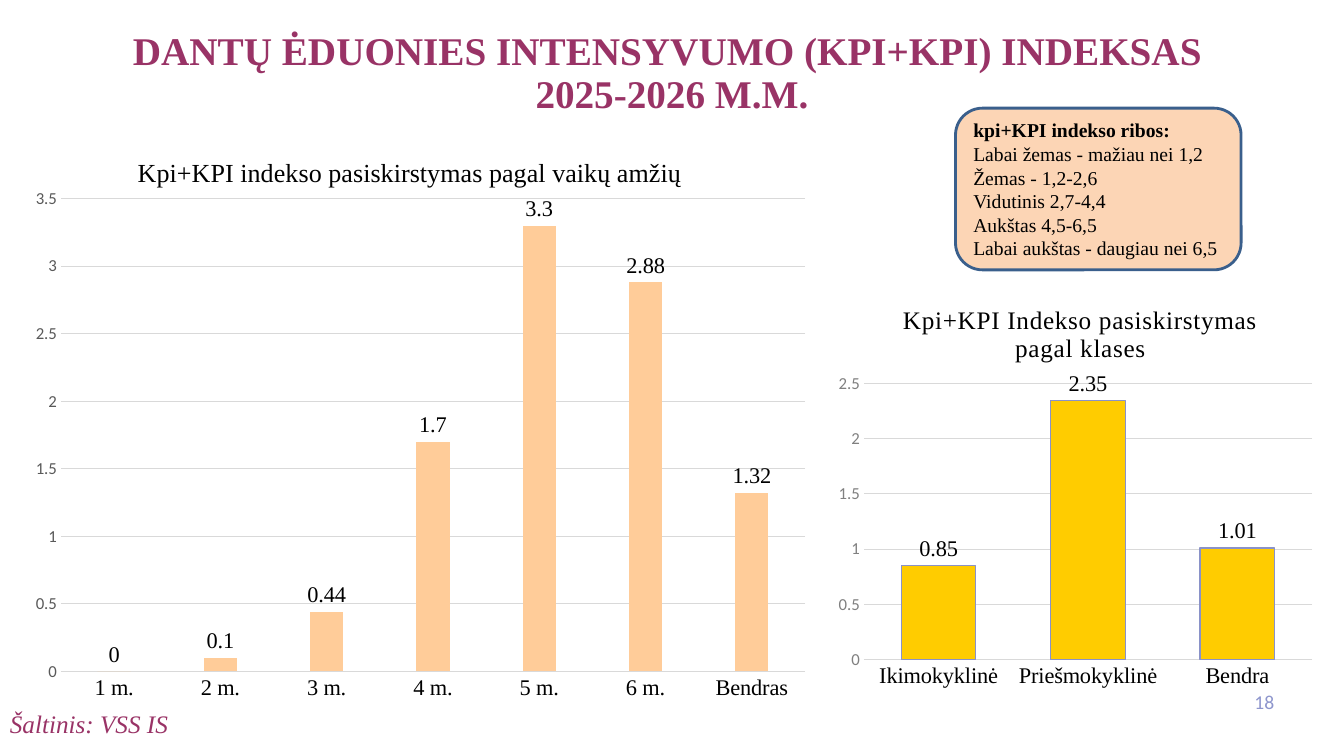
from lxml.etree import SubElement
from pptx import Presentation
from pptx.chart.data import CategoryChartData as ChartData
from pptx.dml.color import RGBColor as Color
from pptx.enum.chart import XL_CHART_TYPE as ChartType, XL_LABEL_POSITION as LabelPosition
from pptx.enum.chart import XL_TICK_MARK as TickMark
from pptx.enum.shapes import MSO_SHAPE as Shape
from pptx.enum.text import MSO_ANCHOR as Anchor, MSO_AUTO_SIZE as AutoSize, PP_ALIGN as Align
from pptx.oxml.ns import qn
from pptx.util import Pt

PX = 9525
SERIF, SANS = "Times New Roman", "Calibri"
COLORS = {
    "plum": "993366", "black": "000000", "peach": "FCD5B5", "navy": "3A5F8C",
    "lilac": "8E96CD", "grid": "D9D9D9", "gray": "808080", "dark": "595959",
    "orange": "FFCC99", "yellow": "FFCC00", "edge": "8A92C8",
}


def color(name):
    """Return the named colour."""
    return Color.from_string(COLORS[name])


def emu(box):
    """Turn a box in px into EMU."""
    return [length * PX for length in box]


def style(font, size, tint, name=SERIF, **extra):
    """Apply format values to a font."""
    values = {"size": Pt(size), "name": name, "bold": False, **extra}
    for key, value in values.items():
        setattr(font, key, value)
    font.color.rgb = color(tint)


def add_title(page, box, text):
    """Move and format the title placeholder."""
    title = page.shapes.title
    title.left, title.top, title.width, title.height = emu(box)
    frame = title.text_frame
    frame.text = text
    frame.auto_size = AutoSize.NONE
    frame.vertical_anchor = Anchor.BOTTOM
    para = frame.paragraphs[0]
    para.alignment, para.line_spacing = Align.CENTER, 0.9
    for span in para.runs:
        style(span.font, 28, "plum", bold=True)


def add_note(page, box, text, size, tint, name=SERIF, align=Align.LEFT, italic=False):
    """Add one line of small text."""
    frame = page.shapes.add_textbox(*emu(box)).text_frame
    frame.word_wrap = True
    para = frame.paragraphs[0]
    para.text, para.alignment = text, align
    style(para.runs[0].font, size, tint, name, italic=italic)


def add_limits(page, box, lines):
    """Add the rounded card with the index limits."""
    card = page.shapes.add_shape(Shape.ROUNDED_RECTANGLE, *emu(box))
    card.shadow.inherit = False
    card.fill.solid()
    card.fill.fore_color.rgb = color("peach")
    card.line.color.rgb = color("navy")
    card.line.width = Pt(2)
    frame = card.text_frame
    frame.word_wrap = True
    frame.vertical_anchor = Anchor.MIDDLE
    frame.text = "\n".join(lines)
    for index, para in enumerate(frame.paragraphs):
        para.alignment = Align.LEFT
        style(para.runs[0].font, 14, "black", bold=index == 0)


def place(parent, shares, inner=False):
    """Give a chart title or plot area a manual layout."""
    for old in parent.findall(qn("c:layout")):
        parent.remove(old)
    layout = SubElement(parent, qn("c:layout"))
    parent.remove(layout)
    parent.insert(1 if parent.find(qn("c:tx")) is not None else 0, layout)
    manual = SubElement(layout, qn("c:manualLayout"))
    if inner:
        SubElement(manual, qn("c:layoutTarget")).set("val", "inner")
    for key in ("xMode", "yMode"):
        SubElement(manual, qn(f"c:{key}")).set("val", "edge")
    for key, share in zip("xywh", shares):
        SubElement(manual, qn(f"c:{key}")).set("val", str(share))


def add_bars(page, box, heading, values, fill, plot_area, gap, overlap, top, step,
             axis_tint, title_size, spacing=0, edge=None):
    """Add a column chart with its heading, axes and value labels."""
    data = ChartData()
    data.categories = list(values)
    data.add_series("Series 1", list(values.values()))
    chart = page.shapes.add_chart(ChartType.COLUMN_CLUSTERED, *emu(box), data).chart
    chart.has_legend = False
    style(chart.font, 10, "black", SANS)
    chart.has_title = True
    frame = chart.chart_title.text_frame
    frame.text = heading
    span = frame.paragraphs[0].runs[0]
    style(span.font, title_size, "black")
    span.font._element.set("spc", str(spacing))
    chart.chart_title.include_in_layout = False
    place(chart.chart_title._element, (0.14, 0.05))
    place(chart._chartSpace.chart.plotArea, plot_area, inner=True)

    category, value = chart.category_axis, chart.value_axis
    for axis in (category, value):
        axis.major_tick_mark = axis.minor_tick_mark = TickMark.NONE
    style(category.tick_labels.font, 16, "black")
    style(value.tick_labels.font, 12, axis_tint, SANS)
    value.minimum_scale, value.maximum_scale, value.major_unit = 0, top, step
    value.format.line.fill.background()
    for line in (category.format.line, value.major_gridlines.format.line):
        line.color.rgb = color("grid")
        line.width = Pt(0.75)

    plot = chart.plots[0]
    plot.gap_width, plot.overlap, plot.vary_by_categories = gap, overlap, False
    bars = plot.series[0]
    bars.format.fill.solid()
    bars.format.fill.fore_color.rgb = color(fill)
    if edge:
        bars.format.line.color.rgb = color(edge)
        bars.format.line.width = Pt(0.75)
    labels = bars.data_labels
    labels.show_value = True
    labels.position = LabelPosition.OUTSIDE_END
    style(labels.font, 16, "black")


def main():
    """Build and save the deck."""
    deck = Presentation()
    deck.slide_width, deck.slide_height = emu((1280, 720))
    page = deck.slides.add_slide(deck.slide_layouts[5])
    add_title(page, (20, 56, 1240, 60),
              "DANTŲ ĖDUONIES INTENSYVUMO (KPI+KPI) INDEKSAS \v2025-2026 M.M.")
    add_note(page, (0, 670, 605, 36), "Šaltinis: VSS IS", 18, "plum", italic=True)
    add_note(page, (1173, 652, 50, 38), "18", 14, "lilac", SANS, Align.RIGHT)
    add_limits(page, (910, 103, 272, 154), [
        "kpi+KPI indekso ribos:", "Labai žemas - mažiau nei 1,2", "Žemas - 1,2-2,6",
        "Vidutinis 2,7-4,4", "Aukštas 4,5-6,5", "Labai aukštas - daugiau nei 6,5",
    ])
    add_bars(page, (790, 266, 469, 398), "Kpi+KPI Indekso pasiskirstymas pagal klases",
             {"Ikimokyklinė": 0.85, "Priešmokyklinė": 2.35, "Bendra": 1.01},
             "yellow", (0.07, 0.25, 0.91, 0.66), 100, -24, 2.5, 0.5, "gray", 18, 50, "edge")
    add_bars(page, (20, 116, 762, 563), "Kpi+KPI indekso pasiskirstymas pagal vaikų amžių",
             {"1 m.": 0, "2 m.": 0.1, "3 m.": 0.44, "4 m.": 1.7, "5 m.": 3.3,
              "6 m.": 2.88, "Bendras": 1.32},
             "orange", (0.05, 0.13, 0.93, 0.8), 219, -27, 3.5, 0.5, "dark", 18.6)
    deck.save("out.pptx")


if __name__ == "__main__":
    main()
